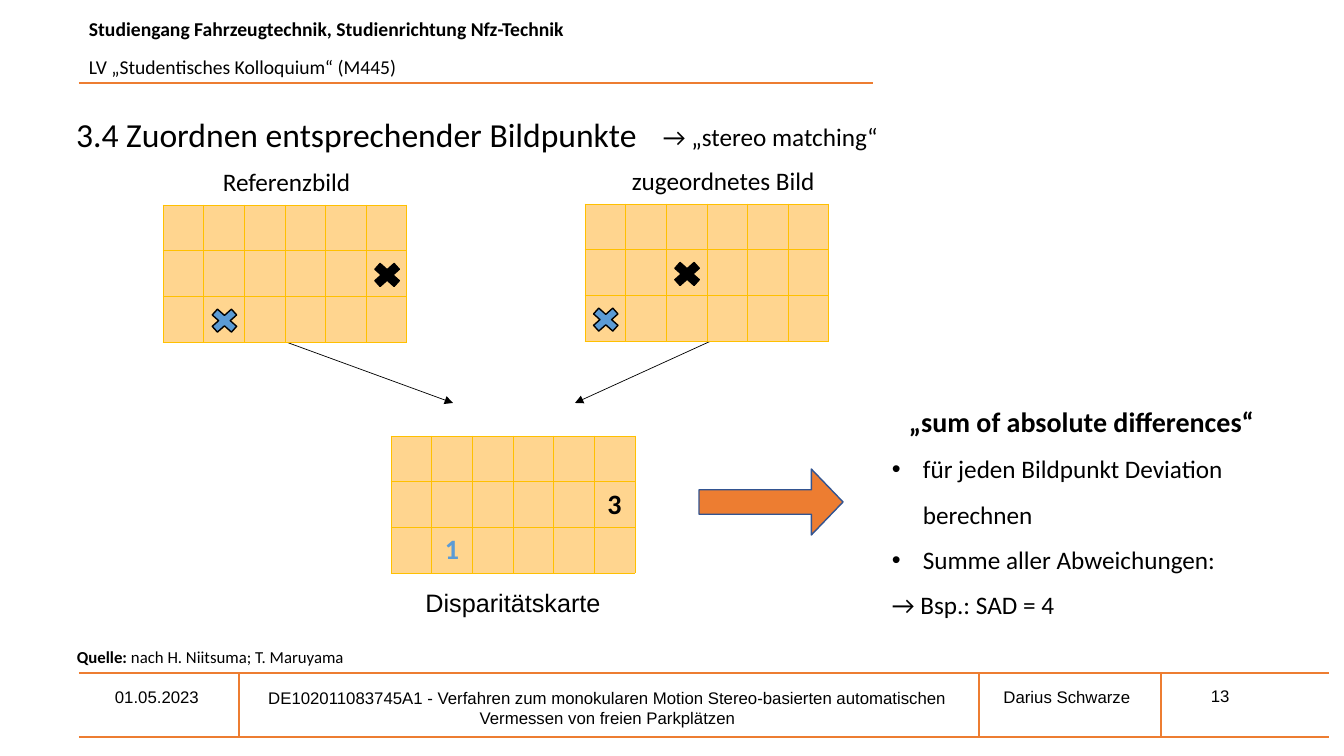
from itertools import product

from lxml import etree
from pptx import Presentation
from pptx import util as u
from pptx.dml.color import RGBColor
from pptx.enum import shapes, text
from pptx.oxml import ns

PX = 914400 / 100.8
COLORS = {"accent": "ED7D31", "arrow_edge": "325491", "black": "000000",
          "blue": "5B9BD5", "cell": "FFD58F", "grid": "FFC000"}
ROWS, COLS = 3, 6
LEFT, CENTER = text.PP_ALIGN.LEFT, text.PP_ALIGN.CENTER


def px(*lengths):
    return [u.Emu(round(length * PX)) for length in lengths]


def rgb(name):
    return RGBColor.from_string(COLORS[name])


def style_font(font, size, face="Calibri", bold=False, color="black"):
    font.size, font.name, font.bold = u.Pt(size), face, bold
    font.color.rgb = rgb(color)


def add_label(slide, box, words, size, face="Calibri", align=LEFT,
              anchor=text.MSO_ANCHOR.TOP):
    """Add a wrapping text box; each line of words becomes a paragraph."""
    frame = slide.shapes.add_textbox(*px(*box)).text_frame
    frame.word_wrap = True
    frame.vertical_anchor = anchor
    frame.text = words
    for paragraph in frame.paragraphs:
        paragraph.alignment = align
        for run in paragraph.runs:
            style_font(run.font, size, face)
    return frame


def add_line(slide, start, end, color="accent", width=1.5, arrow=False):
    line = slide.shapes.add_connector(
        shapes.MSO_CONNECTOR.STRAIGHT, *px(*start, *end))
    line.line.color.rgb = rgb(color)
    line.line.width = u.Pt(width)
    if arrow:
        etree.SubElement(line.line._get_or_add_ln(), ns.qn("a:tailEnd"), type="triangle")
    etree.SubElement(line._element.spPr, ns.qn("a:effectLst"))


def add_solid(slide, kind, box, fill, edge):
    shape = slide.shapes.add_shape(kind, *px(*box))
    shape.shadow.inherit = False
    shape.fill.solid()
    shape.fill.fore_color.rgb = rgb(fill)
    shape.line.color.rgb = rgb(edge)
    shape.line.width = u.Pt(1)
    return shape


def add_header(slide, box):
    x, y, width, height = box
    course = add_label(
        slide, (x, y, 907, height),
        "Studiengang Fahrzeugtechnik, Studienrichtung Nfz-Technik\n"
        "LV „Studentisches Kolloquium“ (M445)", 14)
    course.paragraphs[0].runs[0].font.bold = True
    course.paragraphs[1].space_before = u.Pt(10)
    add_line(slide, (x, y + height), (x + width, y + height))


def add_heading(slide, box):
    x, y, width, height = box
    title = slide.shapes.title
    title.left, title.top, title.width, title.height = px(*box)
    frame = title.text_frame
    frame.text = "3.4 Zuordnen entsprechender Bildpunkte"
    frame.auto_size = text.MSO_AUTO_SIZE.NONE
    frame.vertical_anchor = text.MSO_ANCHOR.MIDDLE
    frame.paragraphs[0].alignment = LEFT
    style_font(frame.paragraphs[0].runs[0].font, 24)
    add_label(slide, (x + width, y + 7, 294, 40), "→ „stereo matching“", 18)


def set_borders(cell):
    properties = cell._tc.get_or_add_tcPr()
    for side in "LRTB":
        border = etree.SubElement(properties, ns.qn(f"a:ln{side}"), w=str(u.Pt(0.5)))
        fill = etree.SubElement(border, ns.qn("a:solidFill"))
        etree.SubElement(fill, ns.qn("a:srgbClr"), val=COLORS["grid"])


def add_pixel_grid(slide, box, disparities=()):
    """Draw a grid of pixels; disparities are (row, column, value, color)."""
    grid = slide.shapes.add_table(ROWS, COLS, *px(*box)).table
    for row, col in product(range(ROWS), range(COLS)):
        cell = grid.cell(row, col)
        set_borders(cell)
        cell.fill.solid()
        cell.fill.fore_color.rgb = rgb("cell")
    for row, col, value, color in disparities:
        cell = grid.cell(row, col)
        cell.text = value
        cell.vertical_anchor = text.MSO_ANCHOR.MIDDLE
        cell.text_frame.paragraphs[0].alignment = CENTER
        style_font(cell.text_frame.paragraphs[0].runs[0].font, 20, bold=True, color=color)


def add_camera_image(slide, box, caption, caption_left, points):
    """Draw a captioned grid with crosses; points are (row, column, color)."""
    x, y, width, height = box
    add_label(slide, (caption_left, y - 44, 259, 40), caption, 18)
    add_pixel_grid(slide, box)
    for row, col, color in points:
        center_x = x + (col + 0.5) * width / COLS
        center_y = y + (row + 0.5) * height / ROWS + 1
        add_solid(slide, shapes.MSO_SHAPE.MATH_MULTIPLY,
                  (center_x - 18, center_y - 16, 37, 33), color, "black")


def add_disparity_map(slide, box):
    x, y, width, height = box
    add_pixel_grid(slide, box, [(1, 5, "3", "black"), (2, 1, "1", "blue")])
    add_label(slide, (x, y + height + 9, width, 40), "Disparitätskarte", 18,
              "Arial", CENTER)


def add_sum_of_differences(slide, box):
    x, y, width, height = box
    arrow = add_solid(slide, shapes.MSO_SHAPE.RIGHT_ARROW,
                      (x - 183, y + 86, 144, 66), "accent", "arrow_edge")
    arrow.adjustments[0], arrow.adjustments[1] = 0.37, 0.48
    frame = add_label(
        slide, box,
        "„sum of absolute differences“\nfür jeden Bildpunkt Deviation berechnen\n"
        "Summe aller Abweichungen:\n→ Bsp.: SAD = 4", 18)
    for paragraph in frame.paragraphs:
        paragraph.line_spacing = 1.5
    for paragraph in frame.paragraphs[1:3]:
        properties = paragraph._p.get_or_add_pPr()
        indent = px(31)[0]
        properties.set("marL", str(indent))
        properties.set("indent", str(-indent))
        etree.SubElement(properties, ns.qn("a:buFont"), typeface="Arial")
        etree.SubElement(properties, ns.qn("a:buChar"), char="•")
    frame.paragraphs[0].alignment = CENTER
    style_font(frame.paragraphs[0].runs[0].font, 20, bold=True)


def add_citation(slide, box):
    paragraph = add_label(slide, box, "Quelle: ", 12).paragraphs[0]
    paragraph.runs[0].font.bold = True
    authors = paragraph.add_run()
    authors.text = "nach H. Niitsuma; T. Maruyama"
    style_font(authors.font, 12)


def add_footer(slide, box):
    x, y, width, height = box
    for edge in (y, y + height):
        add_line(slide, (x, edge), (x + width, edge))
    for divider in (x + 160, x + 900, x + 1082):
        add_line(slide, (divider, y), (divider, y + height))
    add_label(slide, (x + 26, y + 9, 134, 30), "01.05.2023", 12, "Arial")
    add_label(slide, (x + 156, y + 10, 745, 60),
              "DE102011083745A1 - Verfahren zum monokularen Motion Stereo-basierten "
              "automatischen Vermessen von freien Parkplätzen", 12, "Arial", CENTER)
    add_label(slide, (x + 882, y + 4, 212, 40), "Darius Schwarze", 12, "Arial",
              CENTER, text.MSO_ANCHOR.MIDDLE)
    add_label(slide, (x + 1122, y + 8, 94, 30), "13", 12, "Arial")


def main():
    deck = Presentation()
    deck.slide_width, deck.slide_height = px(1344, 756)
    slide = deck.slides.add_slide(deck.slide_layouts[5])
    add_header(slide, (79, 12, 794, 71))
    add_heading(slide, (66, 109, 587, 51))
    add_line(slide, (286, 342), (453, 403), "black", 0.5, arrow=True)
    add_line(slide, (711, 341), (575, 403), "black", 0.5, arrow=True)
    add_camera_image(slide, (163, 205, 244, 137), "Referenzbild", 213,
                     [(1, 5, "black"), (2, 1, "blue")])
    add_camera_image(slide, (585, 204, 244, 137), "zugeordnetes Bild", 622,
                     [(1, 2, "black"), (2, 0, "blue")])
    add_disparity_map(slide, (391, 436, 244, 137))
    add_sum_of_differences(slide, (882, 383, 399, 239))
    add_citation(slide, (67, 642, 671, 30))
    add_footer(slide, (79, 673, 1250, 64))
    deck.save("out.pptx")


if __name__ == "__main__":
    main()
